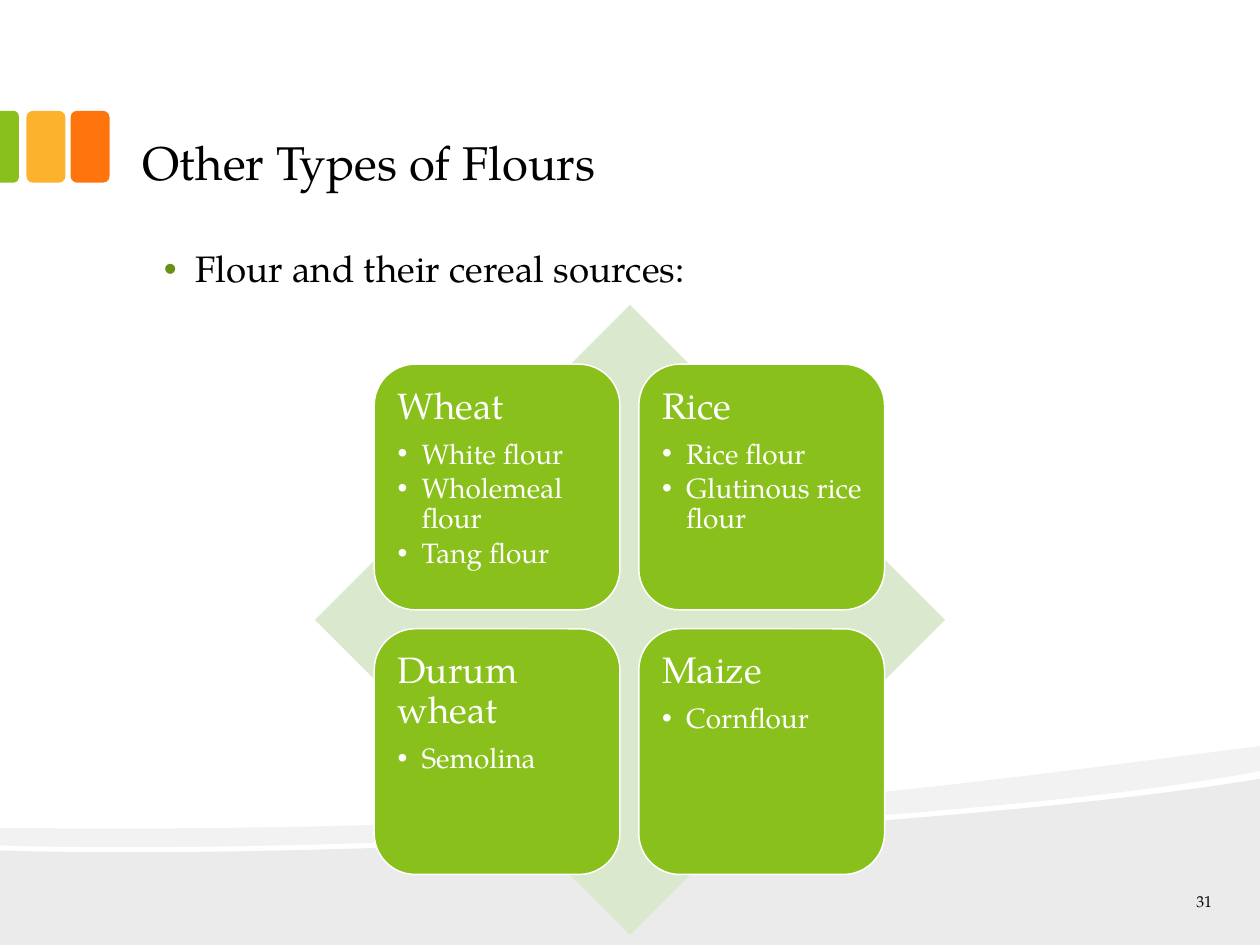
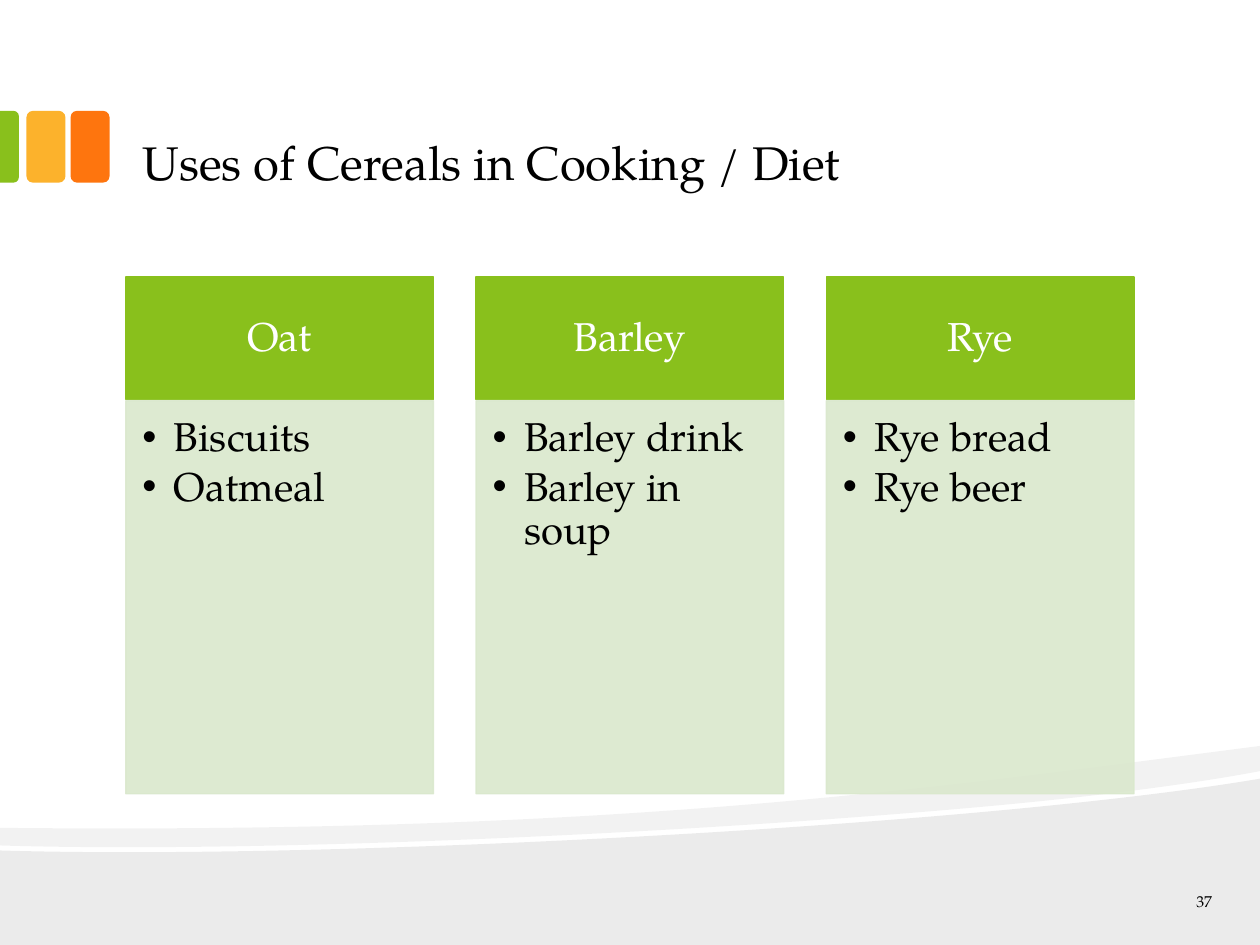
from dataclasses import dataclass

from lxml.etree import SubElement
from pptx import Presentation
from pptx.dml.color import RGBColor
from pptx.enum.shapes import MSO_SHAPE
from pptx.enum.text import MSO_ANCHOR, MSO_AUTO_SIZE, PP_ALIGN
from pptx.oxml.ns import qn
from pptx.util import Inches, Pt

RECT, ROUND = MSO_SHAPE.RECTANGLE, MSO_SHAPE.ROUNDED_RECTANGLE
TAB, DIAMOND = MSO_SHAPE.ROUND_2_SAME_RECTANGLE, MSO_SHAPE.DIAMOND
TOP, MIDDLE, BOTTOM = MSO_ANCHOR.TOP, MSO_ANCHOR.MIDDLE, MSO_ANCHOR.BOTTOM
LEFT, CENTER, RIGHT = PP_ALIGN.LEFT, PP_ALIGN.CENTER, PP_ALIGN.RIGHT
FIXED = MSO_AUTO_SIZE.NONE

FONT = "TeX Gyre Pagella"
COLORS = {
    "black": "000000", "white": "FFFFFF", "green": "89C01C", "amber": "FCB22C",
    "orange": "FE750E", "pale": "DAE8CD", "bullet": "679015",
}
MARGINS = (0.13, 0.07, 0.13, 0.07)

# Each step holds one point for a line, three for a Bezier curve.
GROUND = [
    [(10, 6.18)], [(10, 7.5)], [(0, 7.5)], [(0, 6.75)],
    [(2.64, 6.83), (7.82, 6.55), (10, 6.18)],
]
BAND = [
    [(10, 5.92)], [(10, 6.12)],
    [(9.42, 6.23), (8.62, 6.33), (7.72, 6.41)],
    [(5.23, 6.63), (1.93, 6.77), (0, 6.71)],
    [(0, 6.57)],
    [(4.89, 6.62), (7.28, 6.27), (10, 5.92)],
]


@dataclass
class Box:
    x: float
    y: float
    w: float
    h: float

    def place(self) -> tuple:
        return tuple(Inches(v) for v in (self.x, self.y, self.w, self.h))


@dataclass
class Group:
    name: str
    items: list[str]


@dataclass
class Style:
    size: float
    color: str = "black"
    align: PP_ALIGN = LEFT
    leading: float = 1.0
    before: float = 0
    after: float = 0
    indent: float = 0
    mark: str = ""


FLOURS = [
    Group("Wheat", ["White flour", "Wholemeal flour", "Tang flour"]),
    Group("Rice", ["Rice flour", "Glutinous rice flour"]),
    Group("Durum wheat", ["Semolina"]),
    Group("Maize", ["Cornflour"]),
]
USES = [
    Group("Oat", ["Biscuits", "Oatmeal"]),
    Group("Barley", ["Barley drink", "Barley in soup"]),
    Group("Rye", ["Rye bread", "Rye beer"]),
]

TITLE = Style(27)
LEAD = Style(21, leading=0.9, before=13.5, indent=0.25, mark="bullet")
NUMBER = Style(9, align=RIGHT)
CARD_HEAD = Style(21, "white", leading=0.9, after=7.35)
CARD_ITEM = Style(16, "white", leading=0.9, after=2.4, indent=0.19, mark="white")
COL_HEAD = Style(23, "white", CENTER, leading=0.9)
COL_ITEM = Style(23, leading=0.9, after=3.45, indent=0.25, mark="black")


def rgb(name: str) -> RGBColor:
    return RGBColor.from_string(COLORS[name])


def paint(shape, fill: str, line: str = "", alpha: int = 100) -> None:
    """Set fill, line and opacity in percent, without a shadow."""
    shape.shadow.inherit = False
    shape.fill.solid()
    shape.fill.fore_color.rgb = rgb(fill)
    if line:
        shape.line.color.rgb = rgb(line)
        shape.line.width = Pt(0.85)
    else:
        shape.line.fill.background()
    if alpha < 100:
        for color in shape.element.spPr.iter(qn("a:srgbClr")):
            SubElement(color, qn("a:alpha"), val=str(alpha * 1000))


def add_box(slide, kind, box: Box, fill: str, line: str = "", alpha: int = 100):
    shape = slide.shapes.add_shape(kind, *box.place())
    paint(shape, fill, line, alpha)
    return shape


def write(shape, lines: list[tuple[str, Style]], anchor=TOP, margins=MARGINS) -> None:
    frame = shape.text_frame
    frame.auto_size, frame.word_wrap = FIXED, True
    frame.vertical_anchor = anchor
    (frame.margin_left, frame.margin_top,
     frame.margin_right, frame.margin_bottom) = map(Inches, margins)
    for i, (text, style) in enumerate(lines):
        para = frame.add_paragraph() if i else frame.paragraphs[0]
        para.alignment, para.line_spacing = style.align, style.leading
        para.space_before, para.space_after = Pt(style.before), Pt(style.after)
        if style.mark:
            add_mark(para, style)
        run = para.add_run()
        run.text = text
        run.font.name, run.font.size = FONT, Pt(style.size)
        run.font.color.rgb = rgb(style.color)


def add_mark(para, style: Style) -> None:
    """Give a paragraph a hanging, coloured bullet."""
    props = para._p.get_or_add_pPr()
    props.set("marL", str(Inches(style.indent)))
    props.set("indent", str(-Inches(style.indent)))
    color = SubElement(props, qn("a:buClr"))
    SubElement(color, qn("a:srgbClr"), val=COLORS[style.mark])
    SubElement(props, qn("a:buFont"), typeface="Arial")
    SubElement(props, qn("a:buChar"), char="•")


def add_wave(slide, steps: list[list[tuple[float, float]]], alpha: int) -> None:
    """Draw a closed outline, turning each step of three points into a curve."""
    first, *rest = [(Inches(x), Inches(y)) for step in steps for x, y in step]
    pen = slide.shapes.build_freeform(*first)
    pen.add_line_segments(rest, close=True)
    shape = pen.convert_to_shape()
    lines = iter(list(shape.element.iter(qn("a:lnTo"))))
    for step in steps[1:]:
        parts = [next(lines) for _ in step]
        if len(parts) == 3:
            outline = parts[0].getparent()
            bend = SubElement(outline, qn("a:cubicBezTo"))
            outline.replace(parts[0], bend)
            for part in parts:
                bend.append(part[0])
            for part in parts[1:]:
                outline.remove(part)
    paint(shape, "black", alpha=alpha)


def add_base(deck, layout: int, title: str, number: str):
    """Add a slide with its waves, tabs, title and number."""
    slide = deck.slides.add_slide(deck.slide_layouts[layout])
    add_wave(slide, GROUND, 8)
    add_wave(slide, BAND, 5)

    for x, color in ((0.56, "orange"), (0.21, "amber")):
        add_box(slide, ROUND, Box(x, 0.88, 0.31, 0.57), color)
    tab = add_box(slide, TAB, Box(-0.21, 1.09, 0.57, 0.15), "green")
    tab.rotation = 90
    tab.adjustments[0] = 0.29

    head = slide.shapes.title
    head.left, head.top, head.width, head.height = Box(1, 0.17, 8, 1.41).place()
    write(head, [(title, TITLE)], BOTTOM)
    note = slide.shapes.add_textbox(*Box(9.08, 7.05, 0.67, 0.2).place())
    write(note, [(number, NUMBER)], MIDDLE)
    return slide


def add_flours(deck) -> None:
    slide = add_base(deck, 1, "Other Types of Flours", "31")
    body = slide.placeholders[1]
    body.left, body.top, body.width, body.height = Box(1.17, 1.92, 8, 5).place()
    write(body, [("Flour and their cereal sources:", LEAD)])
    add_box(slide, DIAMOND, Box(2.5, 2.42, 5, 5), "pale")
    for i, group in enumerate(FLOURS):
        row, col = divmod(i, 2)
        box = Box(2.97 + col * 2.1, 2.89 + row * 2.1, 1.95, 1.95)
        card = add_box(slide, ROUND, box, "green", "white")
        items = [(item, CARD_ITEM) for item in group.items]
        write(card, [(group.name, CARD_HEAD), *items], margins=(0.09, 0.09, 0.06, 0.09))


def add_uses(deck) -> None:
    slide = add_base(deck, 5, "Uses of Cereals in Cooking / Diet", "37")
    for i, group in enumerate(USES):
        x = 1 + i * 2.78
        head = add_box(slide, RECT, Box(x, 2.2, 2.44, 0.97), "green", "green")
        write(head, [(group.name, COL_HEAD)], MIDDLE, (0.18, 0.1, 0.18, 0.1))
        body = add_box(slide, RECT, Box(x, 3.18, 2.44, 3.12), "pale", "pale", 90)
        items = [(item, COL_ITEM) for item in group.items]
        write(body, items, margins=(0.13, 0.13, 0.18, 0.2))


def main() -> None:
    deck = Presentation()
    deck.slide_width, deck.slide_height = Inches(10), Inches(7.5)
    add_flours(deck)
    add_uses(deck)
    deck.save("out.pptx")


if __name__ == "__main__":
    main()
